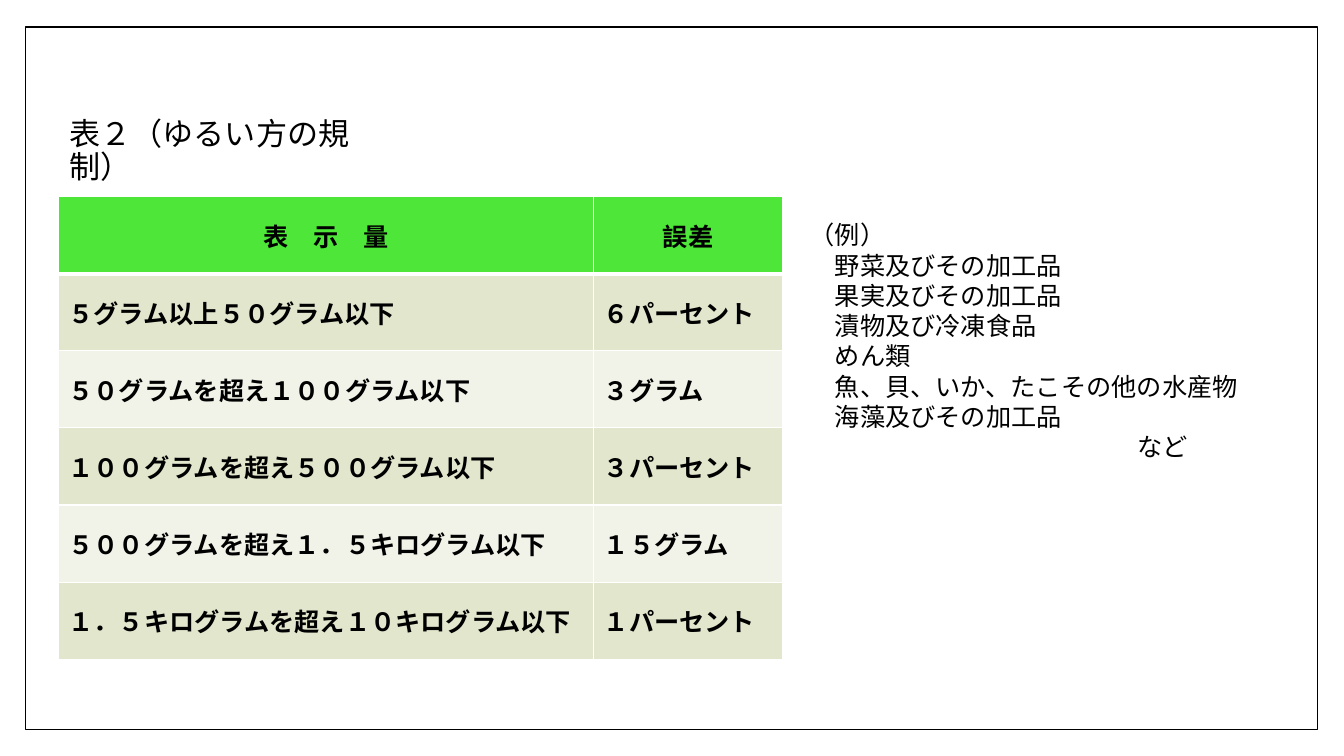
from dataclasses import dataclass

from lxml.etree import SubElement
from pptx import Presentation
from pptx.dml.color import RGBColor
from pptx.enum.shapes import MSO_SHAPE
from pptx.enum.text import MSO_ANCHOR, MSO_AUTO_SIZE, PP_ALIGN
from pptx.oxml.ns import qn
from pptx.util import Emu, Inches, Pt

HEADING = "表２（ゆるい方の規制）"
COLUMN_HEADS = ("表　示　量", "誤差")
TOLERANCES = [
    ("５グラム以上５０グラム以下", "６パーセント"),
    ("５０グラムを超え１００グラム以下", "３グラム"),
    ("１００グラムを超え５００グラム以下", "３パーセント"),
    ("５００グラムを超え１．５キログラム以下", "１５グラム"),
    ("１．５キログラムを超え１０キログラム以下", "１パーセント"),
]
EXAMPLES = [
    ("（例）", 0),
    ("野菜及びその加工品", 1),
    ("果実及びその加工品", 1),
    ("漬物及び冷凍食品", 1),
    ("めん類", 1),
    ("魚、貝、いか、たこその他の水産物", 1),
    ("海藻及びその加工品", 1),
    ("など", 13),
]


@dataclass(frozen=True)
class Theme:
    font: str = "Calibri"
    ink: str = "000000"
    paper: str = "FFFFFF"
    head: str = "4EE739"
    bands: tuple = ("E1E6CD", "F1F3E8")
    heading_size: float = 22.2
    text_size: float = 18
    thin: float = 1
    thick: float = 3


THEME = Theme()
SLIDE_SIZE = (13.33, 7.5)
FRAME_BOX = (0.25, 0.27, 12.82, 6.97)
HEADING_BOX = (0.59, 1.24, 3.58, 0.53)
EXAMPLES_BOX = (7.93, 2.13, 5, 2.52)
TABLE_CORNER = (0.58, 1.95)
COLUMN_WIDTHS = (5.31, 1.87)
TABLE_HEIGHT = 4.59


def color(code):
    return RGBColor.from_string(code)


def place(part, box):
    part.left, part.top, part.width, part.height = map(Inches, box)


def write(paragraph, text, size=THEME.text_size, bold=False,
          align=PP_ALIGN.LEFT, spacing=1.0, indent=0):
    paragraph.alignment = align
    paragraph.line_spacing = spacing
    paragraph.space_before = paragraph.space_after = Pt(0)
    margins = paragraph._p.get_or_add_pPr()
    margins.set("marL", str(Pt(indent * size)))
    margins.set("indent", "0")
    SubElement(margins, qn("a:buNone"))
    run = paragraph.add_run()
    run.text = text
    run.font.name = THEME.font
    run.font.size = Pt(size)
    run.font.bold = bold
    run.font.color.rgb = color(THEME.ink)


def rule_cell(cell, above, below):
    sides = {"L": THEME.thin, "R": THEME.thin, "T": above, "B": below}
    for side, width in sides.items():
        edge = SubElement(cell._tc.get_or_add_tcPr(), qn(f"a:ln{side}"), w=str(Pt(width)))
        SubElement(SubElement(edge, qn("a:solidFill")), qn("a:srgbClr"), val=THEME.paper)


def add_frame(slide):
    frame = slide.shapes.add_shape(MSO_SHAPE.RECTANGLE, *map(Inches, FRAME_BOX))
    frame.shadow.inherit = False
    frame.fill.solid()
    frame.fill.fore_color.rgb = color(THEME.paper)
    frame.line.color.rgb = color(THEME.ink)
    frame.line.width = Pt(THEME.thin)
    slide.shapes._spTree.insert(2, frame._element)


def add_heading(slide):
    heading = slide.shapes.title
    place(heading, HEADING_BOX)
    heading.text_frame.word_wrap = True
    heading.text_frame.auto_size = MSO_AUTO_SIZE.NONE
    heading.text_frame.vertical_anchor = MSO_ANCHOR.MIDDLE
    write(heading.text_frame.paragraphs[0], HEADING, size=THEME.heading_size, spacing=0.9)


def add_examples(slide):
    examples = slide.placeholders[1]
    place(examples, EXAMPLES_BOX)
    body = examples.text_frame
    body.word_wrap = True
    body.auto_size = MSO_AUTO_SIZE.NONE
    body.vertical_anchor = MSO_ANCHOR.TOP
    for index, (example, indent) in enumerate(EXAMPLES):
        paragraph = body.add_paragraph() if index else body.paragraphs[0]
        write(paragraph, example, indent=indent)


def add_tolerances(slide):
    entries = [COLUMN_HEADS, *TOLERANCES]
    box = (*TABLE_CORNER, sum(COLUMN_WIDTHS), TABLE_HEIGHT)
    table = slide.shapes.add_table(
        len(entries), len(COLUMN_HEADS), *map(Inches, box)).table
    for column, width in zip(table.columns, COLUMN_WIDTHS):
        column.width = Inches(width)
    for index, entry in enumerate(entries):
        table.rows[index].height = Emu(Inches(TABLE_HEIGHT) // len(entries))
        is_head = index == 0
        fill = THEME.head if is_head else THEME.bands[(index - 1) % 2]
        align = PP_ALIGN.CENTER if is_head else PP_ALIGN.LEFT
        above = THEME.thick if index == 1 else THEME.thin
        below = THEME.thick if is_head else THEME.thin
        for cell, text in zip(table.rows[index].cells, entry):
            rule_cell(cell, above, below)
            cell.fill.solid()
            cell.fill.fore_color.rgb = color(fill)
            cell.vertical_anchor = MSO_ANCHOR.MIDDLE
            write(cell.text_frame.paragraphs[0], text, bold=True, align=align)


def main():
    deck = Presentation()
    deck.slide_width, deck.slide_height = map(Inches, SLIDE_SIZE)
    slide = deck.slides.add_slide(deck.slide_layouts[1])
    add_frame(slide)
    add_tolerances(slide)
    add_heading(slide)
    add_examples(slide)
    deck.save("out.pptx")


if __name__ == "__main__":
    main()
